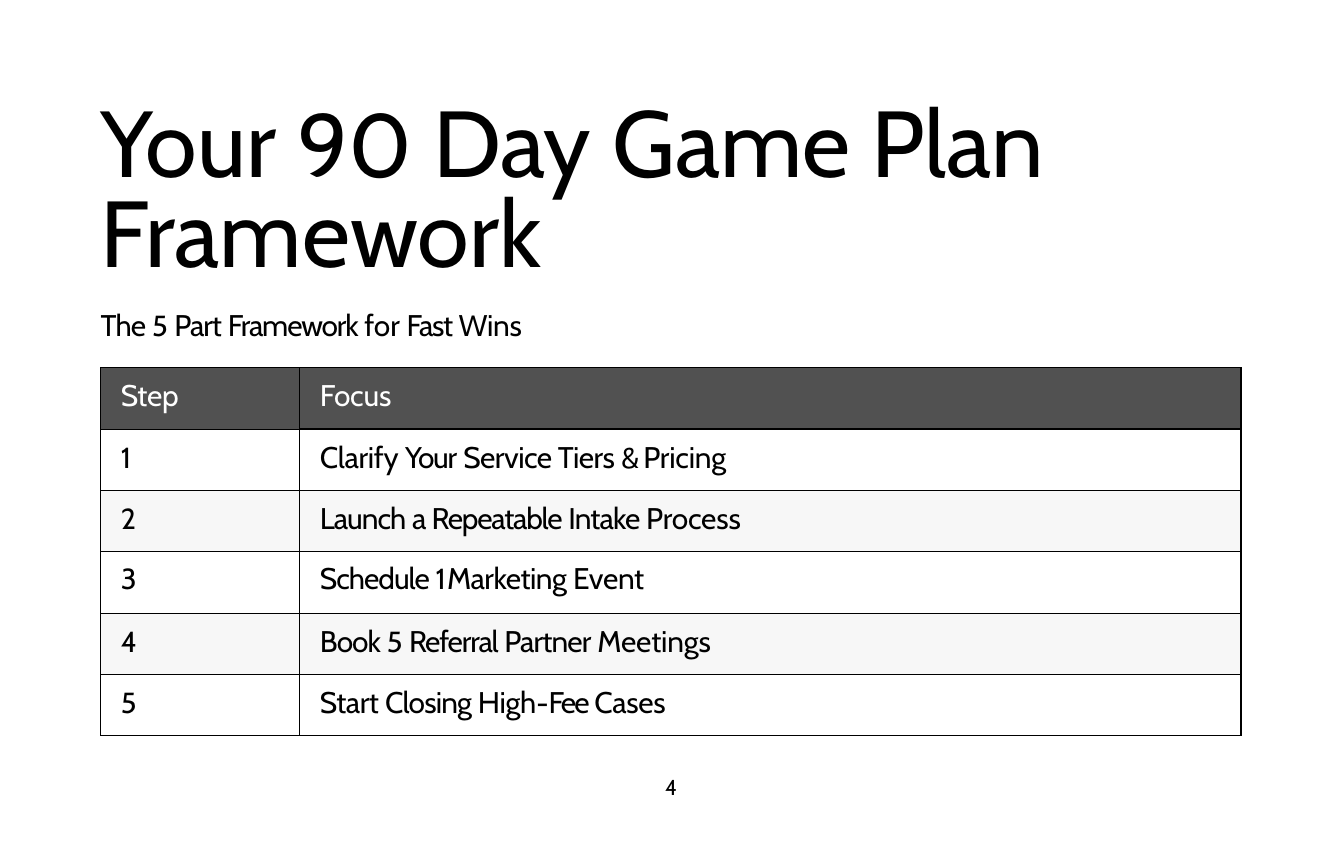
from dataclasses import dataclass

from lxml import etree
from pptx import Presentation
from pptx import util as u
from pptx.dml.color import RGBColor
from pptx.enum import text
from pptx.oxml import ns

WIDTH, HEIGHT = u.Inches(11.25), u.Inches(7.05)
COLUMNS, ROWS = 135, 141


@dataclass(frozen=True)
class Theme:
    font: str = "Cabin"
    ink: str = "000000"
    header_ink: str = "FFFFFF"
    header_fill: str = "515151"
    plain_fill: str = "FFFFFF"
    band_fill: str = "F7F7F7"
    title: float = 56.5
    title_number: float = 54
    body: float = 18
    numeral: float = 17.5
    page: float = 13
    rule: float = 0.75
    header_rule: float = 1
    edge_rule: float = 1.5


THEME = Theme()

TITLE = [("Your ", 0), ("90 ", 0, THEME.title_number), ("Day Game Plan Framework", 0)]
SUBTITLE = [("The ", -0.5), ("5 ", 0, THEME.numeral), ("Part ", -0.6),
            ("Framework ", -0.7), ("for ", 0), ("Fast ", -0.8), ("Wins", -0.2)]
HEADER = ([("Step", -0.2)], [("Focus", -0.1)])
FOCUSES = [
    [("Clarify ", -0.2), ("Your", -0.8), (" Service Tiers ", -0.3),
     ("& ", -1.4, THEME.numeral), ("Pricing", -0.1)],
    [("Launch ", -0.6), ("a ", -1), ("Repeatable ", -0.7), ("Intake ", -0.5),
     ("Process", -0.1)],
    [("Schedule ", -0.6), ("1 ", -3.2, THEME.numeral), ("Marketing ", -0.3),
     ("Event", -0.2)],
    [("Book ", -0.6), ("5 ", 0, THEME.numeral), ("Referral ", -0.7),
     ("Partner ", -0.5), ("Meetings", -0.1)],
    [("Start ", -0.3), ("Closing ", -0.5), ("High", -0.2),
     ("-", -0.2, THEME.numeral), ("Fee ", -1.2), ("Cases", -0.2)],
]
HEADER_DROP = 5.7
DROPS = [(6.9, 6.4), (6.8, 6.3), (6.1, 5.6), (6.8, 6.3), (6.8, 6.3)]


def across(columns):
    return round(WIDTH * columns / COLUMNS)


def down(rows):
    return round(HEIGHT * rows / ROWS)


def write(frame, pieces, size=THEME.body, color=THEME.ink, before=0, line=None):
    paragraph = frame.paragraphs[0]
    paragraph.alignment = text.PP_ALIGN.LEFT
    paragraph.space_before = u.Pt(before)
    paragraph.line_spacing = line
    for wording, tracking, *own_size in pieces:
        run = paragraph.add_run()
        run.text = wording
        run.font.name = THEME.font
        run.font.size = u.Pt(own_size[0] if own_size else size)
        run.font.color.rgb = RGBColor.from_string(color)
        if tracking:
            run._r.get_or_add_rPr().set("spc", str(round(tracking * 100)))


def set_margins(holder, left, top):
    holder.margin_left, holder.margin_top = u.Inches(left), u.Inches(top)
    holder.margin_right = holder.margin_bottom = 0


def prepare(frame, top):
    frame.word_wrap = True
    frame.auto_size = text.MSO_AUTO_SIZE.NONE
    frame.vertical_anchor = text.MSO_ANCHOR.TOP
    set_margins(frame, 0.01, top)


def add_title(slide):
    title = slide.shapes.title
    title.left, title.top = across(10), down(13.4)
    title.width, title.height = across(97.4), down(34.4)
    prepare(title.text_frame, 0.21)
    write(title.text_frame, TITLE, size=THEME.title, before=14.8, line=0.8)


def add_label(slide, pieces, left, top, width, height, inset=0, **style):
    label = slide.shapes.add_textbox(across(left), down(top), across(width), down(height))
    prepare(label.text_frame, inset)
    write(label.text_frame, pieces, **style)


def add_borders(cell, **widths):
    properties = cell._tc.get_or_add_tcPr()
    for side in "LRTB":
        border = etree.SubElement(properties, ns.qn(f"a:ln{side}"),
                                  w=str(u.Pt(widths.get(side, THEME.rule))))
        fill = etree.SubElement(border, ns.qn("a:solidFill"))
        etree.SubElement(fill, ns.qn("a:srgbClr"), val=THEME.ink)


def fill_cell(cell, pieces, drop, fill, borders, **style):
    set_margins(cell, 0.17, drop / 72)
    add_borders(cell, **borders)
    cell.fill.solid()
    cell.fill.fore_color.rgb = RGBColor.from_string(fill)
    write(cell.text_frame, pieces, before=drop, **style)


def add_framework(slide):
    widths = (20, 94.6)
    row_count = len(FOCUSES) + 1
    row_height = 10.27
    table = slide.shapes.add_table(row_count, len(widths), across(10.1), down(61.6),
                                   across(sum(widths)), down(row_height * row_count)).table
    table.first_row = table.horz_banding = False
    for column, width in zip(table.columns, widths):
        column.width = across(width)
    for row in table.rows:
        row.height = down(row_height)

    edge = {"R": THEME.edge_rule}
    for index, heading in enumerate(HEADER):
        borders = {**edge, "B": THEME.header_rule} if index else {}
        fill_cell(table.cell(0, index), heading, HEADER_DROP, THEME.header_fill,
                  borders, color=THEME.header_ink)
    for step, (focus, drops) in enumerate(zip(FOCUSES, DROPS), start=1):
        fill = THEME.plain_fill if step % 2 else THEME.band_fill
        borders = {**edge, "T": THEME.header_rule} if step == 1 else edge
        fill_cell(table.cell(step, 0), [(str(step), 0)], drops[0], fill, {},
                  size=THEME.numeral)
        fill_cell(table.cell(step, 1), focus, drops[1], fill, borders)


def main():
    deck = Presentation()
    deck.slide_width, deck.slide_height = WIDTH, HEIGHT
    slide = deck.slides.add_slide(deck.slide_layouts.get_by_name("Title Only"))
    add_title(slide)
    add_label(slide, SUBTITLE, 10, 51.2, 46.3, 6.6, inset=0.01, before=0.9)
    add_framework(slide)
    add_label(slide, [("4", 0.1)], 66.7, 129.8, 1.7, 4.2, size=THEME.page, line=u.Pt(14.6))
    deck.save("out.pptx")


if __name__ == "__main__":
    main()
